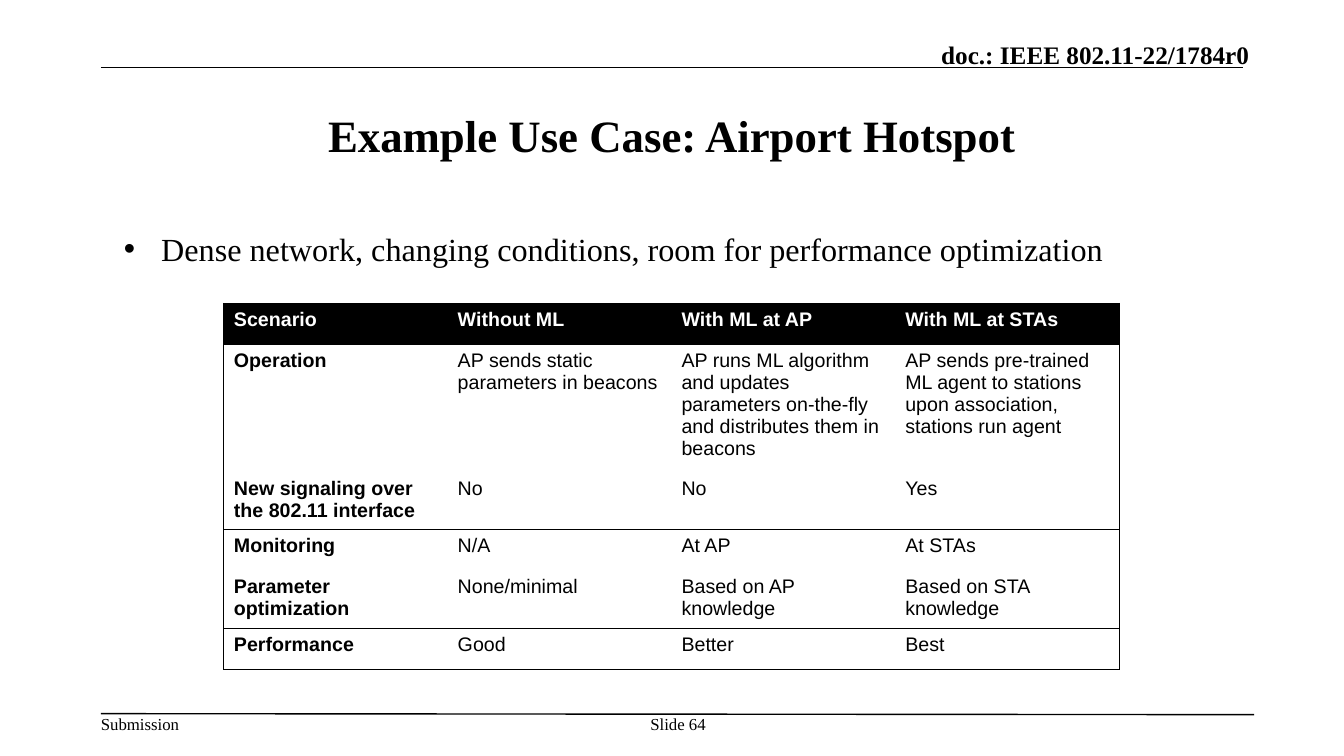
from pptx import Presentation
from pptx.dml.color import RGBColor
from pptx.enum.shapes import MSO_CONNECTOR
from pptx.enum.text import MSO_ANCHOR, PP_ALIGN
from pptx.oxml.ns import qn
from pptx.util import Inches, Pt
from lxml.etree import SubElement

BLACK = RGBColor(0, 0, 0)
THEME = {
    "ink": BLACK,
    "reverse": RGBColor(255, 255, 255),
    "footer": {"name": "Times New Roman", "size": Pt(12), "bold": False},
    "document": {"name": "Times New Roman", "size": Pt(18), "bold": True},
    "title": {"name": "Times New Roman", "size": Pt(32), "bold": True},
    "bullet": {"name": "Times New Roman", "size": Pt(23), "bold": False},
    "cell": {"name": "Arial", "size": Pt(14), "bold": False},
    "label": {"name": "Arial", "size": Pt(14), "bold": True},
    "rule": Pt(1),
    "border": Pt(0.75),
}


def write(paragraph, text, style, color):
    run = paragraph.add_run()
    run.text = text
    for attribute, value in THEME[style].items():
        setattr(run.font, attribute, value)
    run.font.color.rgb = color


def add_text(box, text, style, align, anchor, insets, wrap=True):
    frame = slide.shapes.add_textbox(*map(Inches, box)).text_frame
    side, edge = map(Inches, insets)
    layout = {
        "word_wrap": wrap, "vertical_anchor": anchor,
        "margin_left": side, "margin_right": side,
        "margin_top": edge, "margin_bottom": edge,
    }
    for attribute, value in layout.items():
        setattr(frame, attribute, value)
    paragraph = frame.paragraphs[0]
    paragraph.alignment = align
    write(paragraph, text, style, THEME["ink"])
    return paragraph


presentation = Presentation()
presentation.slide_width = Inches(13.33)
presentation.slide_height = Inches(7.5)
slide = presentation.slides.add_slide(presentation.slide_layouts[6])

for ends in [(1, 0.67, 12.33, 0.67), (1, 7.08, 12.44, 7.09)]:
    rule = slide.shapes.add_connector(MSO_CONNECTOR.STRAIGHT, *map(Inches, ends))
    rule.line.color.rgb = THEME["ink"]
    rule.line.width = THEME["rule"]
    SubElement(rule._element.spPr, qn("a:effectLst"))

flush, padded = (0, 0), (0.1, 0.05)
add_text((1, 7.08, 0.79, 0.2), "Submission", "footer",
         PP_ALIGN.LEFT, MSO_ANCHOR.TOP, flush, wrap=False)
add_text((7.29, 0.39, 5.1, 0.3), "doc.: IEEE 802.11-22/1784r0", "document",
         PP_ALIGN.RIGHT, MSO_ANCHOR.BOTTOM, flush)
add_text((1, 0.75, 11.33, 1.17), "Example Use Case: Airport Hotspot", "title",
         PP_ALIGN.CENTER, MSO_ANCHOR.MIDDLE, padded)
add_text((6.34, 7.08, 0.77, 0.4), "Slide 64", "footer",
         PP_ALIGN.CENTER, MSO_ANCHOR.TOP, flush)

scenarios = [
    ["Scenario", "Without ML", "With ML at AP", "With ML at STAs"],
    ["Operation", "AP sends static parameters in beacons",
     "AP runs ML algorithm and updates parameters on-the-fly and distributes them in beacons",
     "AP sends pre-trained ML agent to stations upon association, stations run agent"],
    ["New signaling over the 802.11 interface", "No", "No", "Yes"],
    ["Monitoring", "N/A", "At AP", "At STAs"],
    ["Parameter optimization", "None/minimal", "Based on AP knowledge",
     "Based on STA knowledge"],
    ["Performance", "Good", "Better", "Best"],
]
last_row, last_column = len(scenarios) - 1, len(scenarios[0]) - 1
ruled_edges = {0, 1, 3, 5, 6}

comparison = slide.shapes.add_table(
    len(scenarios), len(scenarios[0]),
    Inches(2.22), Inches(3.01), Inches(8.89), Inches(2.46)).table
comparison.horz_banding = False
for column in comparison.columns:
    column.width = Inches(2.22)
for row in comparison.rows:
    row.height = Inches(0.41)

for r, scenario in enumerate(scenarios):
    for c, text in enumerate(scenario):
        cell = comparison.cell(r, c)
        style = "label" if r == 0 or c == 0 else "cell"
        write(cell.text_frame.paragraphs[0], text, style,
              THEME["reverse"] if r == 0 else THEME["ink"])
        borders = {
            "a:lnL": c == 0,
            "a:lnR": c == last_column,
            "a:lnT": r in ruled_edges,
            "a:lnB": r + 1 in ruled_edges,
        }
        properties = cell._tc.get_or_add_tcPr()
        for side, drawn in borders.items():
            border = SubElement(properties, qn(side), w=str(THEME["border"]))
            if drawn:
                paint = SubElement(border, qn("a:solidFill"))
                SubElement(paint, qn("a:srgbClr"), val=str(THEME["ink"]))
            else:
                SubElement(border, qn("a:noFill"))
        if r == 0:
            cell.fill.solid()
            cell.fill.fore_color.rgb = THEME["ink"]
        else:
            cell.fill.background()

summary = add_text(
    (1, 2.17, 11.33, 1.75),
    "Dense network, changing conditions, room for performance optimization",
    "bullet", PP_ALIGN.LEFT, MSO_ANCHOR.TOP, padded)
summary.line_spacing = 1.15
indents = summary._p.get_or_add_pPr()
indents.set("marL", str(Inches(0.5)))
indents.set("indent", str(Inches(-0.37)))
bullet_color = SubElement(indents, qn("a:buClr"))
SubElement(bullet_color, qn("a:srgbClr"), val=str(THEME["ink"]))
SubElement(indents, qn("a:buFont"), typeface="Arial")
SubElement(indents, qn("a:buChar"), char="•")

presentation.save("out.pptx")
